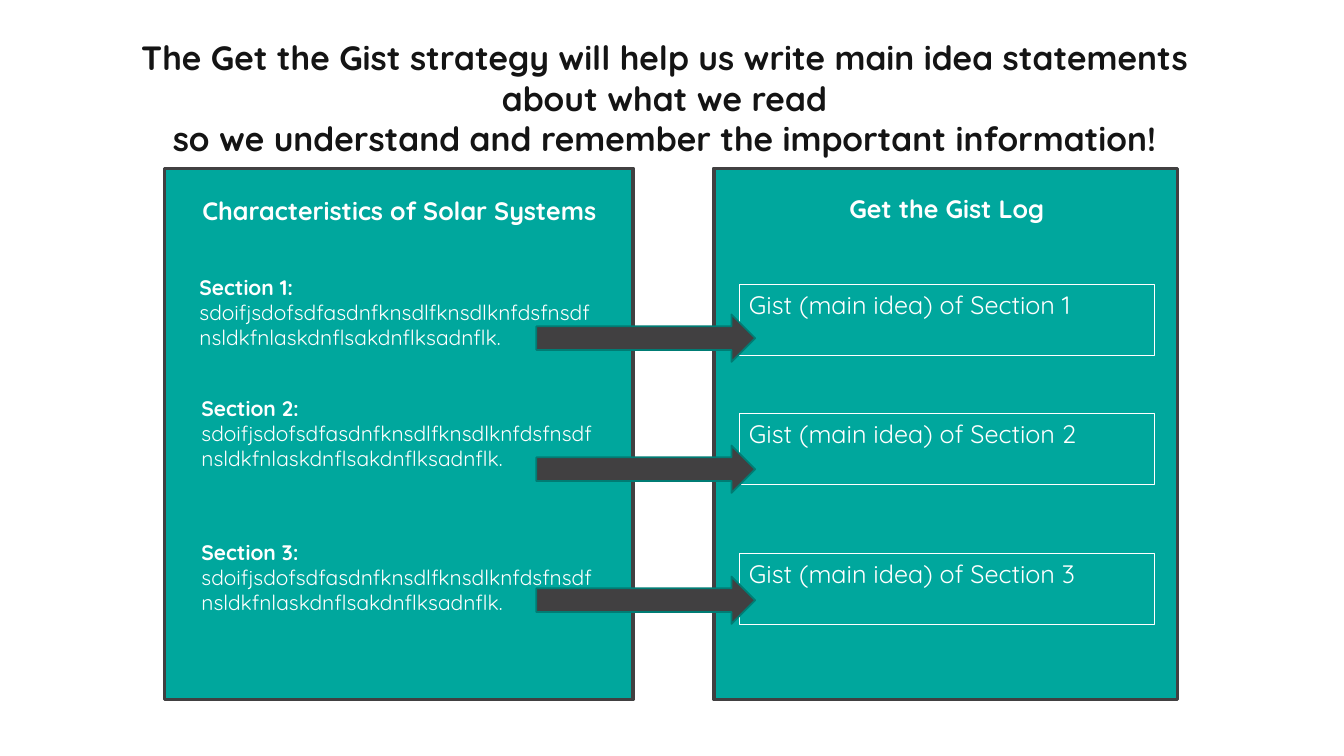
import pptx
import pptx.util
import pptx.dml.color
import pptx.enum.shapes
import pptx.enum.text

PX = 9144  # 100 px to the inch
FONT = "Quicksand"
TEAL, DARK, WHITE, INK, ARROW_EDGE = "00A79D", "414041", "FFFFFF", "141414", "007C74"
SHAPE = pptx.enum.shapes.MSO_SHAPE
CENTER = pptx.enum.text.PP_ALIGN.CENTER
LEFT = pptx.enum.text.PP_ALIGN.LEFT


def color(value):
    return pptx.dml.color.RGBColor.from_string(value)


def write(shape, lines, size, ink, alignment, bold):
    """Fill a shape with top-anchored, wrapped paragraphs in one style."""
    frame = shape.text_frame
    frame.text = "\n".join(lines)
    frame.word_wrap = True
    frame.auto_size = pptx.enum.text.MSO_AUTO_SIZE.NONE
    frame.vertical_anchor = pptx.enum.text.MSO_ANCHOR.TOP
    for paragraph in frame.paragraphs:
        paragraph.alignment = alignment
        for run in paragraph.runs:
            run.font.name = FONT
            run.font.size = pptx.util.Pt(size)
            run.font.bold = bold
            run.font.color.rgb = color(ink)


presentation = pptx.Presentation()
presentation.slide_width = 1333 * PX
presentation.slide_height = 750 * PX
slide = presentation.slides.add_slide(presentation.slide_layouts[5])
slide.background.fill.solid()
slide.background.fill.fore_color.rgb = color(WHITE)

# Title
title = slide.shapes.title
title.left, title.top, title.width, title.height = 83 * PX, 32 * PX, 1152 * PX, 131 * PX
write(title, [
    "The Get the Gist strategy will help us write main idea statements",
    "about what we read",
    "so we understand and remember the important information!",
], 24, INK, CENTER, True)

# Two panels with headings; the left one is grouped with its text
passage = slide.shapes.add_group_shape()
panels = [
    (passage.shapes, 163, 465, 190, 189, "Characteristics of Solar Systems"),
    (slide.shapes, 708, 460, 733, 187, "Get the Gist Log"),
]
for shapes, left, width, heading_left, heading_top, heading in panels:
    panel = shapes.add_shape(SHAPE.RECTANGLE, left * PX, 167 * PX, width * PX, 527 * PX)
    panel.shadow.inherit = False
    panel.fill.solid()
    panel.fill.fore_color.rgb = color(TEAL)
    panel.line.color.rgb = color(DARK)
    panel.line.width = pptx.util.Pt(2.5)
    heading_box = shapes.add_textbox(heading_left * PX, heading_top * PX, 412 * PX, 40 * PX)
    write(heading_box, [heading], 18, WHITE, CENTER, True)

# Passage sections and their gist boxes
sections = [(188, 267, 282), (190, 387, 410), (190, 530, 549)]
for number, (section_left, section_top, gist_top) in enumerate(sections, start=1):
    section = passage.shapes.add_textbox(section_left * PX, section_top * PX, 412 * PX, 86 * PX)
    write(section, [f"Section {number}: "], 15, WHITE, LEFT, True)
    body = section.text_frame.paragraphs[0].add_run()
    body.text = "sdoifjsdofsdfasdnfknsdlfknsdlknfdsfnsdfnsldkfnlaskdnflsakdnflksadnflk."
    body.font.name = FONT
    body.font.size = pptx.util.Pt(15)
    body.font.bold = False
    body.font.color.rgb = color(WHITE)

    gist = slide.shapes.add_shape(SHAPE.RECTANGLE, 733 * PX, gist_top * PX, 412 * PX, 71 * PX)
    gist.shadow.inherit = False
    gist.fill.background()
    gist.line.color.rgb = color(WHITE)
    gist.line.width = pptx.util.Pt(0.75)
    write(gist, [f"Gist (main idea) of Section {number}"], 18, WHITE, LEFT, False)

# Evenly spaced arrows from passage to log
for row in range(len(sections)):
    arrow = slide.shapes.add_shape(
        SHAPE.RIGHT_ARROW, 532 * PX, (312 + 130 * row) * PX, 217 * PX, 47 * PX)
    arrow.shadow.inherit = False
    arrow.fill.solid()
    arrow.fill.fore_color.rgb = color(DARK)
    arrow.line.color.rgb = color(ARROW_EDGE)
    arrow.line.width = pptx.util.Pt(1.25)

presentation.save("out.pptx")
